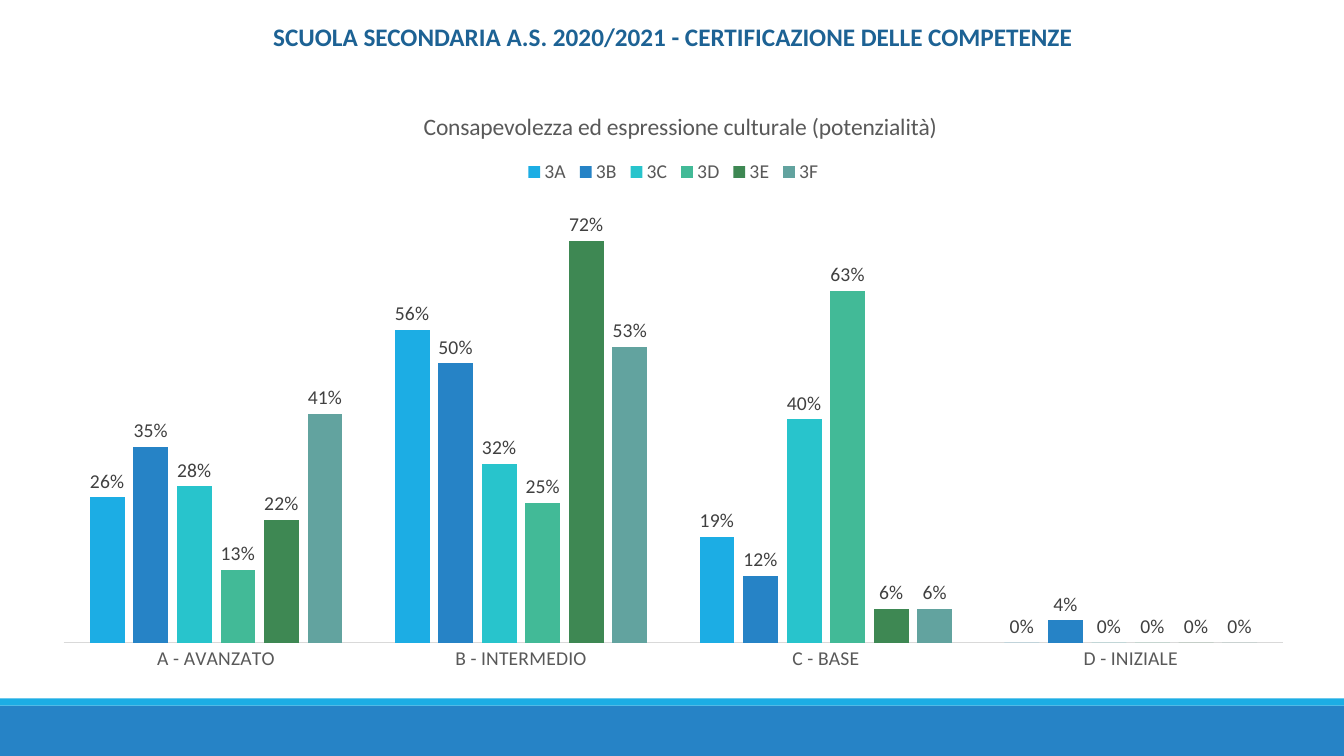
from lxml.etree import SubElement
from pptx import Presentation
from pptx.chart.data import CategoryChartData
from pptx.dml.color import RGBColor
from pptx.enum.chart import XL_CHART_TYPE, XL_LABEL_POSITION, XL_LEGEND_POSITION, XL_TICK_MARK
from pptx.enum.shapes import MSO_SHAPE
from pptx.enum.text import MSO_ANCHOR, PP_ALIGN
from pptx.oxml.ns import qn
from pptx.util import Emu, Pt

PX = 9144  # 100 px to the inch
WIDTH, HEIGHT = 1333, 750
FONT = "Calibri"
BLUE = RGBColor(0x26, 0x83, 0xC6)
SKY = RGBColor(0x1C, 0xAD, 0xE4)
TITLE_BLUE = RGBColor(0x1D, 0x62, 0x94)
TEAL = RGBColor(0x28, 0xC4, 0xCC)
MINT = RGBColor(0x42, 0xBA, 0x97)
GREEN = RGBColor(0x3E, 0x88, 0x53)
SAGE = RGBColor(0x62, 0xA3, 0x9F)
LABEL_GREY = RGBColor(0x40, 0x40, 0x40)
TEXT_GREY = RGBColor(0x59, 0x59, 0x59)
LINE_GREY = RGBColor(0xD9, 0xD9, 0xD9)

LEVELS = ["A - AVANZATO", "B - INTERMEDIO", "C - BASE", "D - INIZIALE"]
CLASSES = [
    ("3A", SKY, (0.26, 0.56, 0.19, 0)),
    ("3B", BLUE, (0.35, 0.5, 0.12, 0.04)),
    ("3C", TEAL, (0.28, 0.32, 0.4, 0)),
    ("3D", MINT, (0.13, 0.25, 0.63, 0)),
    ("3E", GREEN, (0.22, 0.72, 0.06, 0)),
    ("3F", SAGE, (0.41, 0.53, 0.06, 0)),
]


def scaled(box):
    return [Emu(length * PX) for length in box]


def set_font(font, size, color, bold=False):
    font.name, font.size, font.bold = FONT, Pt(size), bold
    font.color.rgb = color


def add_footer(slide, box):
    """Draw the blue footer with a narrow light band along its top."""
    left, top, width, height = box
    band = 7
    for y, band_height, color in ((top + band, height - band, BLUE), (top, band, SKY)):
        bar = slide.shapes.add_shape(
            MSO_SHAPE.RECTANGLE, *scaled((left, y, width, band_height)))
        bar.shadow.inherit = False
        bar.fill.solid()
        bar.fill.fore_color.rgb = color
        bar.line.fill.background()


def place_title(slide, box, text):
    title = slide.shapes.title
    title.left, title.top, title.width, title.height = scaled(box)
    frame = title.text_frame
    frame.text = text
    frame.vertical_anchor = MSO_ANCHOR.TOP
    paragraph = frame.paragraphs[0]
    paragraph.alignment = PP_ALIGN.LEFT
    set_font(paragraph.font, 18, TITLE_BLUE, bold=True)


def set_layout(part, after=None, target=None, **fractions):
    """Fix a chart part at fractions (x, y, w, h) of the chart's area."""
    for old in part.findall(qn("c:layout")):
        part.remove(old)
    layout = SubElement(part, qn("c:layout"))
    position = 0 if after is None else part.index(part.find(qn(after))) + 1
    part.insert(position, layout)
    manual = SubElement(layout, qn("c:manualLayout"))
    if target:
        SubElement(manual, qn("c:layoutTarget")).set("val", target)
    for name in ("x", "y"):
        SubElement(manual, qn(f"c:{name}Mode")).set("val", "edge")
    for name, value in fractions.items():
        SubElement(manual, qn(f"c:{name}")).set("val", str(value))


def style_axes(chart):
    category_axis = chart.category_axis
    category_axis.major_tick_mark = XL_TICK_MARK.NONE
    set_font(category_axis.tick_labels.font, 14, TEXT_GREY)
    category_axis.format.line.color.rgb = LINE_GREY
    category_axis.format.line.width = Pt(0.75)
    value_axis = chart.value_axis
    value_axis.minimum_scale, value_axis.maximum_scale = 0, 0.8
    value_axis.has_major_gridlines = False
    value_axis.visible = False


def style_columns(plot):
    plot.gap_width, plot.overlap = 150, -25
    plot.vary_by_categories = False
    for series, (_, color, _) in zip(plot.series, CLASSES):
        series.format.fill.solid()
        series.format.fill.fore_color.rgb = color
        labels = series.data_labels
        labels.show_value = True
        labels.number_format, labels.number_format_is_linked = "0%", False
        labels.position = XL_LABEL_POSITION.OUTSIDE_END
        set_font(labels.font, 14, LABEL_GREY)


def add_results_chart(slide, box, heading):
    data = CategoryChartData(number_format="0%")
    data.categories = LEVELS
    for name, _, values in CLASSES:
        data.add_series(name, values)
    chart = slide.shapes.add_chart(
        XL_CHART_TYPE.COLUMN_CLUSTERED, *scaled(box), data).chart
    chart.font.name, chart.font.size = FONT, Pt(14)

    chart.has_title = True
    chart.chart_title.include_in_layout = False
    chart.chart_title.text_frame.text = heading
    set_font(chart.chart_title.text_frame.paragraphs[0].font, 16.8, TEXT_GREY)

    chart.has_legend = True
    chart.legend.position = XL_LEGEND_POSITION.TOP
    chart.legend.include_in_layout = False
    set_font(chart.legend.font, 14, TEXT_GREY)

    style_axes(chart)
    style_columns(chart.plots[0])

    chart_element = chart.element.find(qn("c:chart")) if hasattr(chart, "element") \
        else chart._chartSpace.find(qn("c:chart"))
    set_layout(chart_element.find(qn("c:title")), after="c:tx", x=0.3, y=0.03)
    set_layout(chart_element.find(qn("c:legend")), after="c:legendPos",
               x=0.38, y=0.11, w=0.24, h=0.06)
    set_layout(chart_element.find(qn("c:plotArea")), target="inner",
               x=0.02, y=0.18, w=0.96, h=0.75)


def main():
    presentation = Presentation()
    presentation.slide_width, presentation.slide_height = scaled((WIDTH, HEIGHT))
    slide = presentation.slides.add_slide(presentation.slide_layouts[5])
    add_footer(slide, (0, 693, WIDTH, HEIGHT - 693))
    place_title(slide, (261, 16, 862, 40),
                "SCUOLA SECONDARIA A.S. 2020/2021 - CERTIFICAZIONE DELLE COMPETENZE")
    add_results_chart(slide, (38, 88, 1260, 591),
                      "Consapevolezza ed espressione culturale (potenzialità)")
    presentation.save("out.pptx")


if __name__ == "__main__":
    main()
